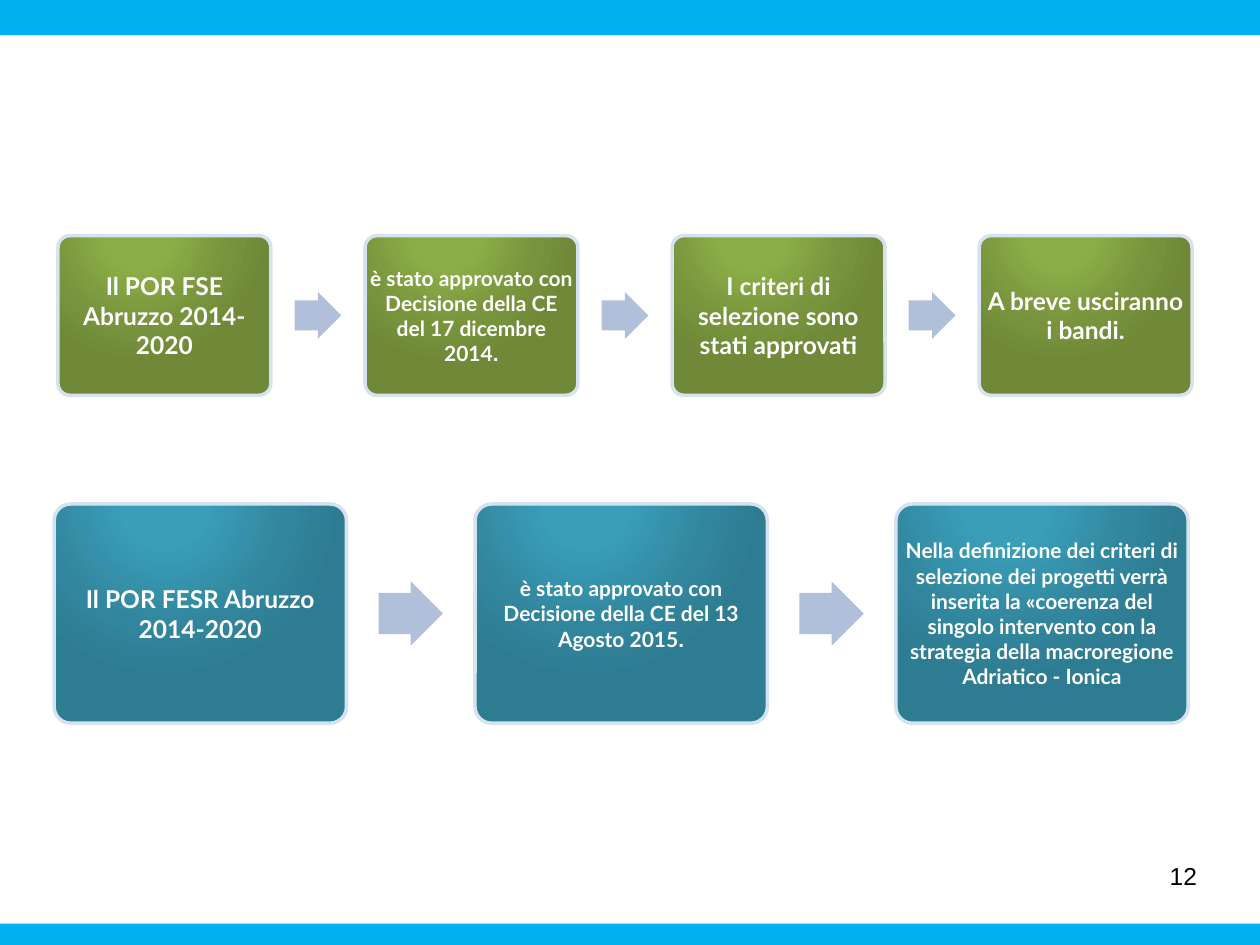
from lxml import etree
from pptx import Presentation
from pptx.dml.color import RGBColor
from pptx.enum.shapes import MSO_SHAPE
from pptx.enum.text import MSO_ANCHOR, PP_ALIGN
from pptx.oxml import parse_xml
from pptx.oxml.ns import nsdecls
from pptx.util import Inches, Pt

ROUNDED, ARROW, RECTANGLE = MSO_SHAPE.ROUNDED_RECTANGLE, MSO_SHAPE.RIGHT_ARROW, MSO_SHAPE.RECTANGLE
CENTER, RIGHT = PP_ALIGN.CENTER, PP_ALIGN.RIGHT
TOP, MIDDLE = MSO_ANCHOR.TOP, MSO_ANCHOR.MIDDLE
WHITE = RGBColor(0xFF, 0xFF, 0xFF)
BLACK = RGBColor(0x00, 0x00, 0x00)
BAND_BLUE = RGBColor(0x00, 0xB0, 0xF0)
ARROW_BLUE = RGBColor(0xB1, 0xC0, 0xDA)
BORDER_BLUE = RGBColor(0xD7, 0xE2, 0xF0)
GREENS = [RGBColor(0x8D, 0xAE, 0x47), RGBColor(0x77, 0x93, 0x3C), RGBColor(0x6F, 0x89, 0x38)]
TEALS = [RGBColor(0x3A, 0x9E, 0xB9), RGBColor(0x31, 0x85, 0x9C), RGBColor(0x2E, 0x7C, 0x91)]

presentation = Presentation()
presentation.slide_width, presentation.slide_height = Inches(10), Inches(7.5)
slide = presentation.slides.add_slide(presentation.slide_layouts[6])


def add_shape(kind, left, top, width, height, color):
    shape = slide.shapes.add_shape(kind, Inches(left), Inches(top), Inches(width), Inches(height))
    shape.shadow.inherit = False
    shape.fill.solid()
    shape.fill.fore_color.rgb = color
    shape.line.fill.background()
    return shape


def write_text(shape, text, size=14, font="Lato", color=WHITE, bold=True, align=CENTER, anchor=MIDDLE, ending=""):
    frame = shape.text_frame
    frame.word_wrap = True
    frame.vertical_anchor = anchor
    frame.margin_left = frame.margin_right = frame.margin_top = frame.margin_bottom = 0
    paragraph = frame.paragraphs[0]
    paragraph.alignment = align
    for part, part_font in ((text, font), (ending, "Arial")):
        if part:
            run = paragraph.add_run()
            run.text = part
            run.font.name, run.font.size, run.font.bold = part_font, Pt(size), bold
            run.font.color.rgb = color


FLOWS = [
    (0.46, 1.87, 1.69, 2.437, GREENS, [
        ("Il POR FSE Abruzzo 2014-2020", 14, ""),
        ("è stato approvato con Decisione della CE del 17 dicembre 2014", 12, "."),
        ("I criteri di selezione sono stati approvati", 14, ""),
        ("A breve usciranno i bandi.", 14, ""),
    ]),
    (0.43, 4, 2.32, 3.34, TEALS, [
        ("Il POR FESR Abruzzo 2014-2020", 14, ""),
        ("è stato approvato con Decisione della CE del 13 Agosto 2015", 12, "."),
        ("Nella definizione dei criteri di selezione dei progetti verrà inserita la "
         "«coerenza del singolo intervento con la strategia della macroregione Adriatico - Ionica", 12, ""),
    ]),
]

for start, top, width, pitch, (light, medium, dark), steps in FLOWS:
    height = width * 0.75
    arrow_size = width * 0.22
    for index, (text, size, ending) in enumerate(steps):
        left = start + index * pitch
        box = add_shape(ROUNDED, left, top, width, height, medium)
        box.adjustments[0] = 0.075
        box.line.color.rgb = BORDER_BLUE
        box.line.width = Pt(2)
        gradient = parse_xml(
            f'<a:gradFill {nsdecls("a")} rotWithShape="1"><a:gsLst/><a:path path="circle">'
            '<a:fillToRect l="38000" t="-20000" r="62000" b="120000"/></a:path></a:gradFill>')
        for position, color in ((0, light), (23, light), (69, medium), (97, dark)):
            stop = parse_xml(
                f'<a:gs {nsdecls("a")} pos="{position * 1000}"><a:srgbClr val="{color}"/></a:gs>')
            gradient[0].append(stop)
        solid = box._element.spPr.find("{*}solidFill")
        solid.getparent().replace(solid, gradient)
        write_text(box, text, size=size, ending=ending)
        if index < len(steps) - 1:
            arrow = add_shape(ARROW, left + (width + pitch - arrow_size) / 2,
                              top + (height - arrow_size) / 2, arrow_size, arrow_size, ARROW_BLUE)
            arrow.adjustments[0] = 0.64

page_number = slide.shapes.add_textbox(Inches(7.17), Inches(6.83), Inches(2.33), Inches(0.52))
write_text(page_number, "12", font="Arial", color=BLACK, bold=False, align=RIGHT, anchor=TOP)

for top, height in ((-0.03, 0.31), (7.33, 0.18)):
    add_shape(RECTANGLE, 0, top, 10, height, BAND_BLUE)

presentation.save("out.pptx")
